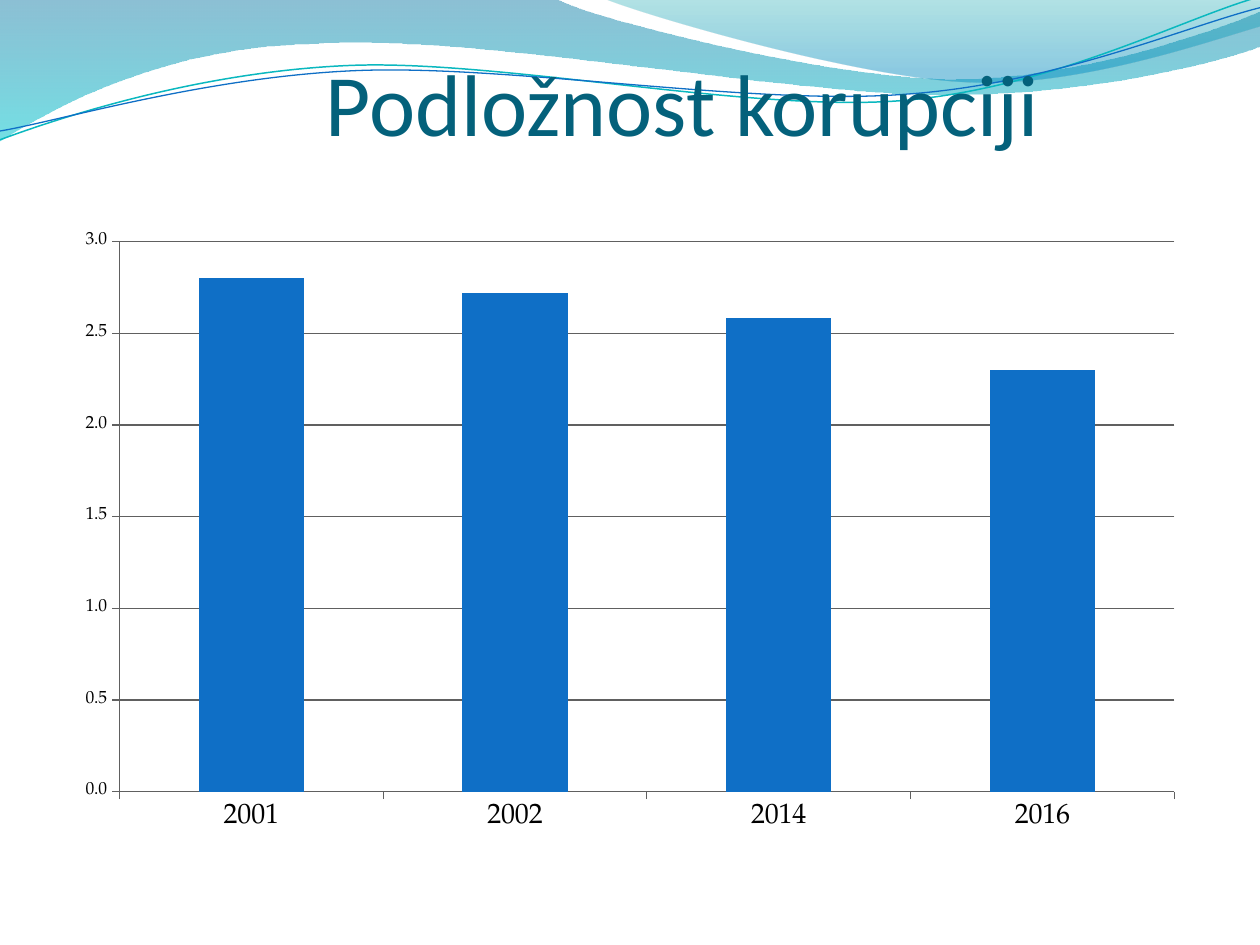
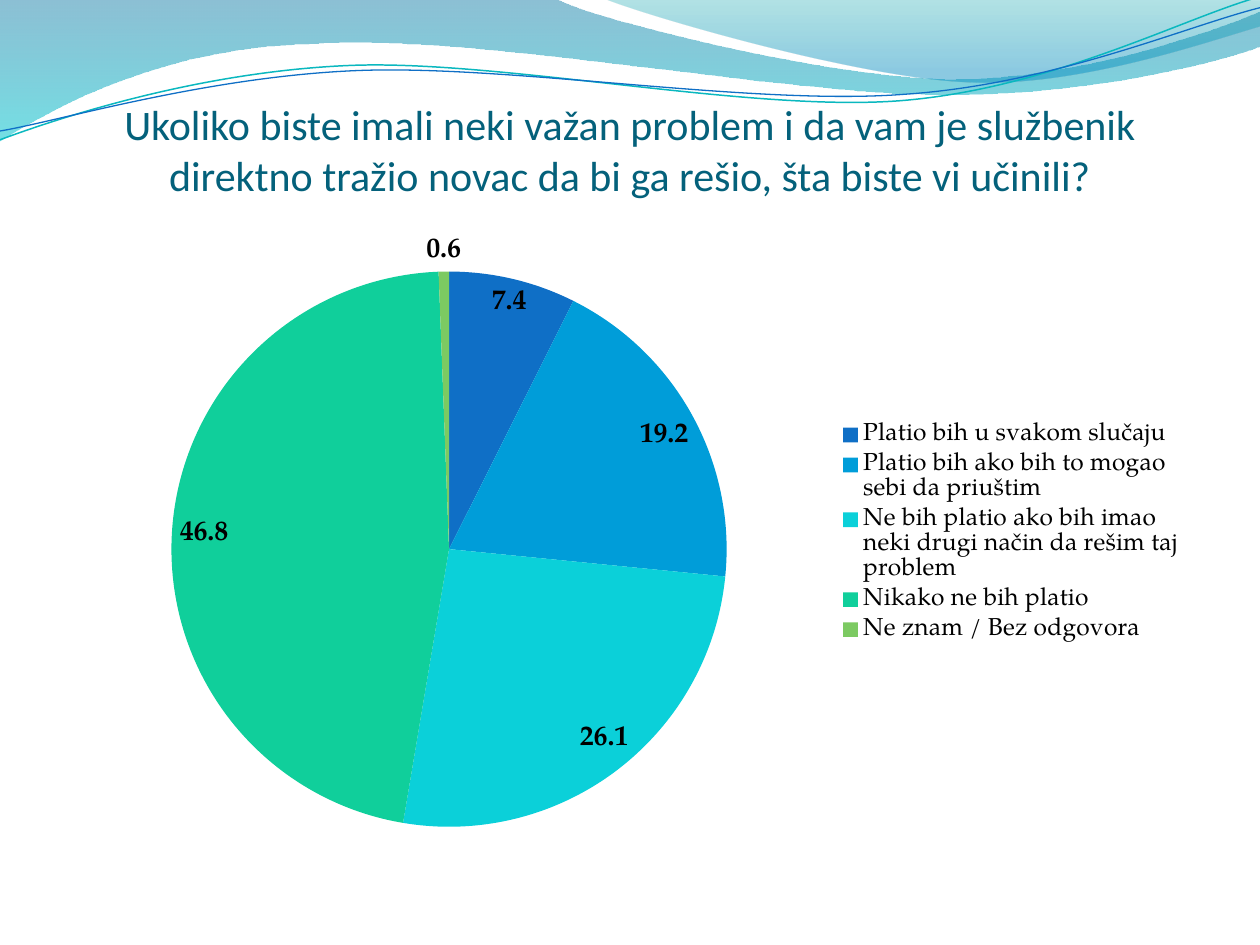
from lxml.etree import SubElement
from pptx import Presentation
from pptx.chart.data import CategoryChartData
from pptx.dml.color import RGBColor
from pptx.enum.chart import XL_CHART_TYPE as ChartType
from pptx.enum.chart import XL_LABEL_POSITION as LabelPosition
from pptx.enum.chart import XL_LEGEND_POSITION as LegendPosition
from pptx.enum.chart import XL_TICK_MARK as TickMark
from pptx.enum.text import MSO_ANCHOR as Anchor
from pptx.enum.text import PP_ALIGN as Align
from pptx.oxml.ns import qn
from pptx.util import Pt

COLORS = {
    name: RGBColor.from_string(value)
    for name, value in {
        "title": "04617B", "text": "000000", "axis": "606060",
        "band_top": "0074A1", "band_bottom": "00C6CF",
        "corner_top": "00A1A9", "corner_bottom": "008BBF", "teal_line": "0AB8BF",
        "blue": "0F6FC6", "sky": "009DD9", "cyan": "0BD0D9",
        "green": "10CF9B", "lime": "7CCA62",
    }.items()
}
TITLE_FONT = "Calibri"
CHART_FONT = "TeX Gyre Pagella"
WAVE_ROTATION = -2.7

# Outlines in points: a pair is a straight step, six numbers are a Bezier curve.
# Gradient stops are (position, colour, opacity in percent).
BANDS = [
    ([(0, 0), (317, -1), (343, 12, 478, 45, 546, 45), (614, 45, 690, 19, 720, 6.5),
      (721, 26), (708, 32, 626, 55, 537, 54), (447, 54, 275, 20, 185, 24.5),
      (93, 26, 33, 60, -1, 81), (0, 0)],
     [(0, "band_top", 45), (1, "band_bottom", 55)]),
    ([(345, -1), (366, 8, 491, 45, 554, 47), (616, 50, 692, 23, 720, 15), (720, 0),
      (345, -1)],
     [(0, "corner_top", 30), (0.8, "corner_bottom", 45)]),
]
WAVE_LINES = [
    ([(-1.4, 62.9), (33.7, 51.7, 114, 29.5, 199.8, 29.9),
      (284.8, 30.3, 425.8, 67.2, 512.4, 64.9),
      (599, 62.4, 676.4, 25.7, 720.1, 15.5)], "teal_line", 0.85),
    ([(-1.1, 57.9), (33, 53.8, 118.3, 32.5, 204, 33),
      (290.5, 33.5, 428.9, 63.8, 515.5, 61.3),
      (601.3, 59.7, 678.5, 30.1, 721.4, 21.4)], "blue", 0.75),
]


def add_outline(page, steps, closed):
    """Draw the steps as one freeform, turning six-number steps into true curves."""
    places = [(Pt(step[i]), Pt(step[i + 1]))
              for step in steps for i in range(0, len(step), 2)]
    builder = page.shapes.build_freeform(*places[0])
    builder.add_line_segments(places[1:], close=closed)
    shape = builder.convert_to_shape()
    shape.shadow.inherit = False
    segments = iter(list(shape.element.iter(qn("a:lnTo"))))
    for step in steps[1:]:
        first = next(segments)
        if len(step) == 6:
            curve = first.makeelement(qn("a:cubicBezTo"))
            first.addprevious(curve)
            for segment in (first, next(segments), next(segments)):
                curve.append(segment[0])
                segment.getparent().remove(segment)
    return shape


def add_page(deck, title, left, top, size):
    """Add a page with a title."""
    page = deck.slides.add_slide(deck.slide_layouts[6])
    frame = page.shapes.add_textbox(Pt(left), Pt(top), Pt(648), Pt(90)).text_frame
    frame.word_wrap = True
    frame.vertical_anchor = Anchor.BOTTOM
    frame.margin_left = frame.margin_right = frame.margin_bottom = 0
    frame.margin_top = Pt(3.6)
    frame.text = title
    para = frame.paragraphs[0]
    para.alignment = Align.CENTER
    font = para.runs[0].font
    font.name, font.size, font.color.rgb = TITLE_FONT, Pt(size), COLORS["title"]
    return page


deck = Presentation()
deck.slide_width, deck.slide_height = Pt(720), Pt(540)

bar_page = add_page(deck, "Podložnost korupciji", 66, -2, 50)
pie_page = add_page(
    deck,
    "Ukoliko biste imali neki važan problem i da vam je službenik direktno "
    "tražio novac da bi ga rešio, šta biste vi učinili?",
    36, 24, 24)

# Wave header, drawn once and moved to the layout that both pages share
header = []
for steps, stops in BANDS:
    band = add_outline(bar_page, steps, closed=True)
    band.line.fill.background()
    band.fill.gradient()
    band.fill.gradient_angle = 270
    for stop, (position, color, _) in zip(band.fill.gradient_stops, stops):
        stop.position = position
        stop.color.rgb = COLORS[color]
    color_tags = list(band.element.spPr.iter(qn("a:srgbClr")))
    for color_tag, (_, _, opacity) in zip(color_tags, stops):
        SubElement(color_tag, qn("a:alpha"), val=str(opacity * 1000))
    header.append(band)
for steps, color, width in WAVE_LINES:
    wave = add_outline(bar_page, steps, closed=False)
    wave.rotation = WAVE_ROTATION
    wave.fill.background()
    wave.line.color.rgb = COLORS[color]
    wave.line.width = Pt(width)
    header.append(wave)

layout = deck.slide_layouts[6]
for holder in list(layout.placeholders):
    holder.element.getparent().remove(holder.element)
for shape in header:
    layout.shapes.element.append(shape.element)

susceptibility = {"2001": 2.8, "2002": 2.72, "2014": 2.58, "2016": 2.3}
answers = {
    "Platio bih u svakom slučaju": 7.4,
    "Platio bih ako bih to mogao sebi da priuštim": 19.2,
    "Ne bih platio ako bih imao neki drugi način da rešim taj problem": 26.1,
    "Nikako ne bih platio": 46.8,
    "Ne znam / Bez odgovora": 0.6,
}

charts = []
for page, kind, values in [
    (bar_page, ChartType.COLUMN_CLUSTERED, susceptibility),
    (pie_page, ChartType.PIE, answers),
]:
    data = CategoryChartData(number_format="0.0")
    data.categories = list(values)
    data.add_series("Series 1", list(values.values()))
    chart = page.shapes.add_chart(
        kind, Pt(36), Pt(126), Pt(648), Pt(356.4), data).chart
    chart.has_title = False
    chart.has_legend = kind == ChartType.PIE
    chart.font.name, chart.font.size = CHART_FONT, Pt(10)
    chart.font.color.rgb = COLORS["text"]
    charts.append(chart)
bar_chart, pie_chart = charts

# Columns
bar_plot = bar_chart.plots[0]
bar_plot.gap_width = 150
bar_plot.vary_by_categories = False
bar_fill = bar_plot.series[0].format.fill
bar_fill.solid()
bar_fill.fore_color.rgb = COLORS["blue"]
value_axis, year_axis = bar_chart.value_axis, bar_chart.category_axis
value_axis.minimum_scale, value_axis.maximum_scale = 0, 3
value_axis.major_unit = 0.5
value_axis.has_major_gridlines = True
value_axis.tick_labels.number_format = "0.0"
value_axis.tick_labels.number_format_is_linked = False
year_axis.tick_labels.font.size = Pt(16)
for axis in (value_axis, year_axis):
    axis.major_tick_mark = TickMark.OUTSIDE
    axis.minor_tick_mark = TickMark.NONE
for part in (value_axis, year_axis, value_axis.major_gridlines):
    part.format.line.color.rgb = COLORS["axis"]
    part.format.line.width = Pt(0.75)

# Pie
pie_plot = pie_chart.plots[0]
pie_plot.vary_by_categories = True
for index, color in enumerate(["blue", "sky", "cyan", "green", "lime"]):
    slice_fill = pie_plot.series[0].points[index].format.fill
    slice_fill.solid()
    slice_fill.fore_color.rgb = COLORS[color]
pie_plot.has_data_labels = True
labels = pie_plot.data_labels
labels.show_value, labels.show_percentage = True, False
labels.number_format, labels.number_format_is_linked = "0.0", False
labels.position = LabelPosition.BEST_FIT
labels.font.size, labels.font.bold = Pt(16), True
pie_chart.legend.position = LegendPosition.RIGHT
pie_chart.legend.include_in_layout = False
pie_chart.legend.font.size = Pt(14)

deck.save("out.pptx")
